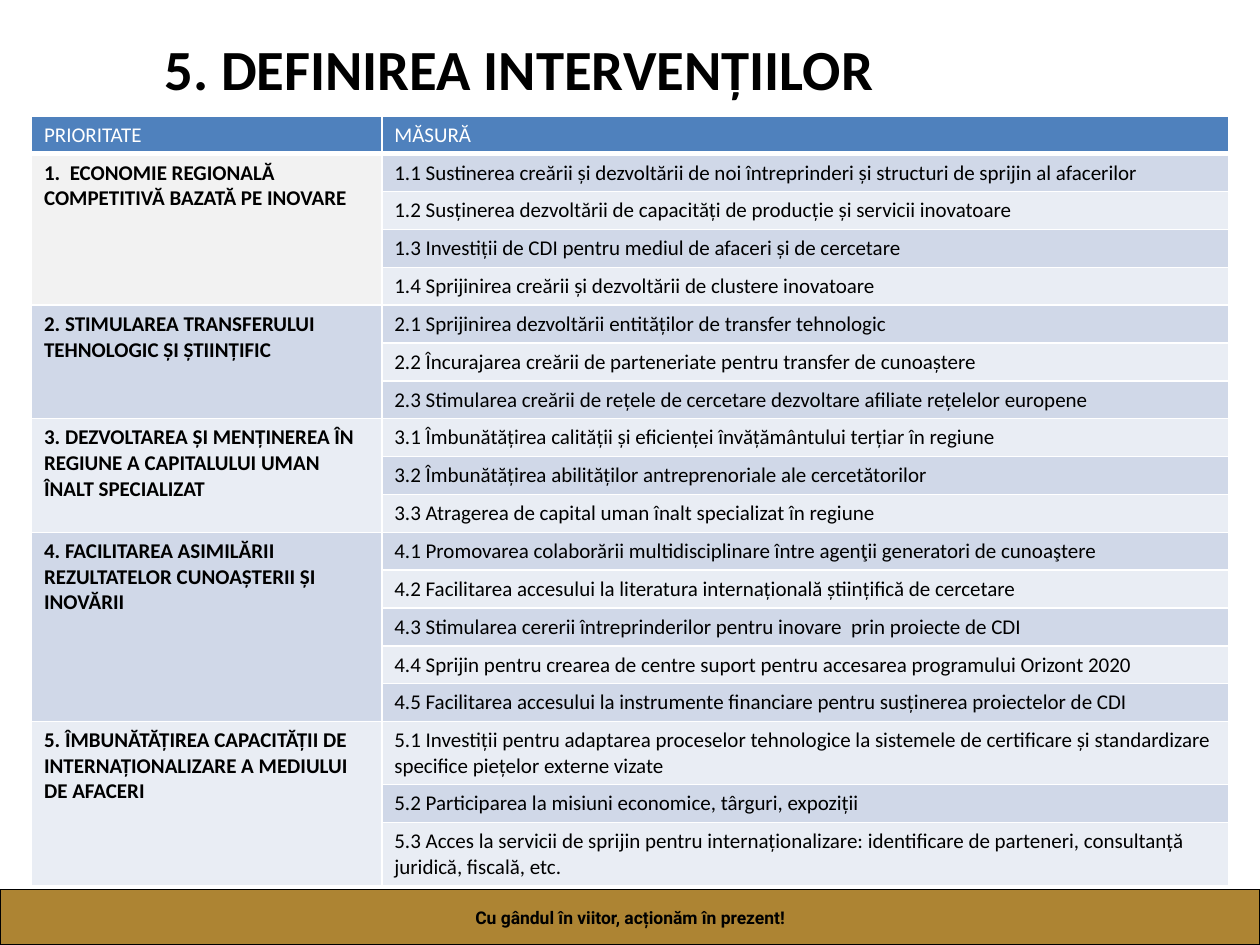
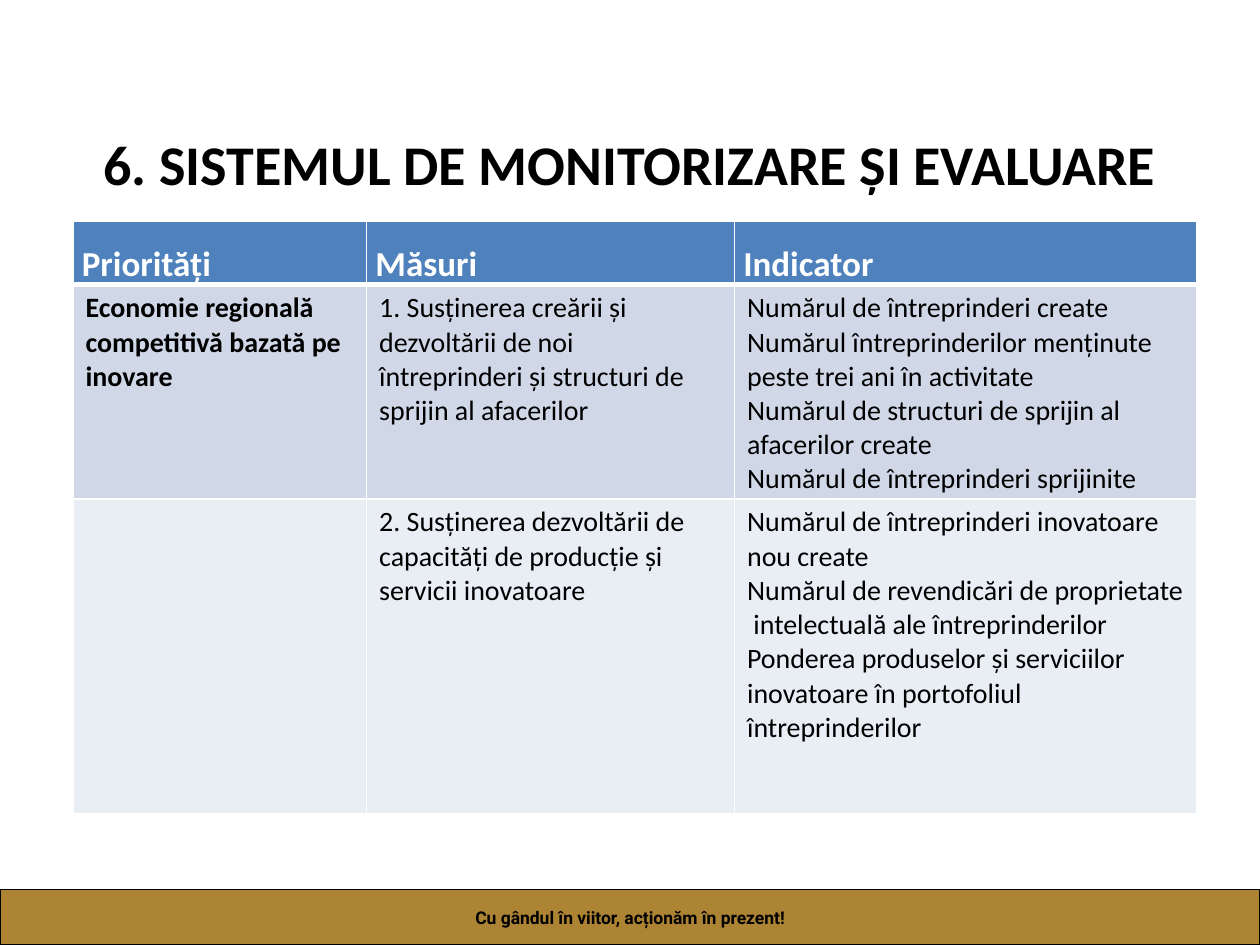
from lxml import etree
from pptx import Presentation
from pptx.dml.color import RGBColor
from pptx.enum import shapes, text
from pptx.oxml.ns import qn
from pptx.util import Inches, Pt

# Content
SLOGAN = "Cu gândul în viitor, acționăm în prezent!"

INTERVENTIONS_TITLE = "5. DEFINIREA INTERVENȚIILOR"
INTERVENTIONS_HEADER = ("PRIORITATE", "MĂSURĂ")
PRIORITIES = [
    ("1.  ECONOMIE REGIONALĂ COMPETITIVĂ BAZATĂ PE INOVARE", [
        "1.1 Sustinerea creării și dezvoltării de noi întreprinderi și structuri de sprijin al afacerilor",
        "1.2 Susținerea dezvoltării de capacități de producție și servicii inovatoare",
        "1.3 Investiții de CDI pentru mediul de afaceri și de cercetare",
        "1.4 Sprijinirea creării și dezvoltării de clustere inovatoare",
    ]),
    ("2. STIMULAREA TRANSFERULUI TEHNOLOGIC ȘI ȘTIINȚIFIC", [
        "2.1 Sprijinirea dezvoltării entităților de transfer tehnologic",
        "2.2 Încurajarea creării de parteneriate pentru transfer de cunoaștere",
        "2.3 Stimularea creării de rețele de cercetare dezvoltare afiliate rețelelor europene",
    ]),
    ("3. DEZVOLTAREA ȘI MENȚINEREA ÎN REGIUNE A CAPITALULUI UMAN ÎNALT SPECIALIZAT", [
        "3.1 Îmbunătățirea calității și eficienței învățământului terțiar în regiune",
        "3.2 Îmbunătățirea abilităților antreprenoriale ale cercetătorilor",
        "3.3 Atragerea de capital uman înalt specializat în regiune",
    ]),
    ("4. FACILITAREA ASIMILĂRII REZULTATELOR CUNOAȘTERII ȘI INOVĂRII", [
        "4.1 Promovarea colaborării multidisciplinare între agenţii generatori de cunoaştere",
        "4.2 Facilitarea accesului la literatura internațională științifică de cercetare",
        "4.3 Stimularea cererii întreprinderilor pentru inovare  prin proiecte de CDI",
        "4.4 Sprijin pentru crearea de centre suport pentru accesarea programului Orizont 2020",
        "4.5 Facilitarea accesului la instrumente financiare pentru susținerea proiectelor de CDI",
    ]),
    ("5. ÎMBUNĂTĂȚIREA CAPACITĂȚII DE INTERNAȚIONALIZARE A MEDIULUI DE AFACERI", [
        "5.1 Investiții pentru adaptarea proceselor tehnologice la sistemele de certificare și "
        "standardizare specifice piețelor externe vizate",
        "5.2 Participarea la misiuni economice, târguri, expoziții",
        "5.3 Acces la servicii de sprijin pentru internaționalizare: identificare de parteneri, "
        "consultanță juridică, fiscală, etc.",
    ]),
]

MONITORING_TITLE = "6. SISTEMUL DE MONITORIZARE ȘI EVALUARE"
MONITORING_HEADER = ("Priorități", "Măsuri", "Indicator")
MONITORING = [
    (["Economie regională competitivă bazată pe inovare"],
     ["1. Susținerea creării și dezvoltării de noi întreprinderi și structuri de sprijin al afacerilor"],
     ["Numărul de întreprinderi create",
      "Numărul întreprinderilor menținute peste trei ani în activitate",
      "Numărul de structuri de sprijin al afacerilor create",
      "Numărul de întreprinderi sprijinite"]),
    ([""],
     ["2. Susținerea dezvoltării de capacități de producție și servicii inovatoare"],
     ["Numărul de întreprinderi inovatoare nou create",
      "Numărul de revendicări de proprietate  intelectuală ale întreprinderilor",
      "Ponderea produselor și serviciilor inovatoare în portofoliul întreprinderilor"]),
]

# Shared look
FONT = "Calibri"
BLACK, WHITE, GOLD = "000000", "FFFFFF", "996600"
HEADER_BLUE, FIRST_PRIORITY = "4F81BD", "F2F2F2"
BANDS = ("D0D8E8", "E9EDF4")


def color(hex_string):
    return RGBColor.from_string(hex_string)


def style(paragraph, size, hex_string=BLACK, bold=False, font=FONT):
    paragraph.font.name = font
    paragraph.font.size = Pt(size)
    paragraph.font.bold = bold
    paragraph.font.color.rgb = color(hex_string)


def add_base(deck, title, box, size):
    """Blank slide with the slogan band and a centred title."""
    slide = deck.slides.add_slide(deck.slide_layouts[6])

    band = slide.shapes.add_shape(shapes.MSO_SHAPE.RECTANGLE, 0, Inches(7.06), Inches(10), Inches(0.44))
    band.shadow.inherit = False
    band.fill.solid()
    band.fill.fore_color.rgb = color(GOLD)
    tint = band.fill._xPr.find(qn("a:solidFill"))[0]
    etree.SubElement(tint, qn("a:alpha"), val="80000")
    band.line.color.rgb = color(BLACK)
    band.line.width = Pt(0.75)

    heading = slide.shapes.add_textbox(*map(Inches, box))
    for shape, words, points, font in ((band, SLOGAN, 10, "Roboto"), (heading, title, size, FONT)):
        frame = shape.text_frame
        frame.word_wrap = shape is heading
        frame.vertical_anchor = text.MSO_ANCHOR.MIDDLE
        frame.text = words
        frame.paragraphs[0].alignment = text.PP_ALIGN.CENTER
        style(frame.paragraphs[0], points, bold=True, font=font)
    return slide


def add_grid(slide, left, top, widths, heights):
    grid = slide.shapes.add_table(len(heights), len(widths), Inches(left), Inches(top),
                                  Inches(sum(widths)), Inches(sum(heights))).table
    for column, width in zip(grid.columns, widths):
        column.width = Inches(width)
    for row, height in zip(grid.rows, heights):
        row.height = Inches(height)
    return grid


def fill_cell(cell, lines, size, fill, hex_string=BLACK, bold=False, bottom=1):
    cell.text = "\n".join(lines)
    for paragraph in cell.text_frame.paragraphs:
        style(paragraph, size, hex_string, bold)
    # White borders go ahead of the fill in the cell properties
    properties = cell._tc.get_or_add_tcPr()
    for side, points in (("L", 1), ("R", 1), ("T", 1), ("B", bottom)):
        border = etree.SubElement(properties, qn(f"a:ln{side}"), w=str(Pt(points)))
        solid = etree.SubElement(border, qn("a:solidFill"))
        etree.SubElement(solid, qn("a:srgbClr"), val=WHITE)
    cell.fill.solid()
    cell.fill.fore_color.rgb = color(fill)


def fill_header(grid, labels, size, bold):
    for column, label in enumerate(labels):
        fill_cell(grid.cell(0, column), [label], size, HEADER_BLUE, WHITE, bold, bottom=3)


def build_interventions(deck):
    slide = add_base(deck, INTERVENTIONS_TITLE, (0.33, 0.25, 7.58, 0.58), 32.4)
    measures = [measure for _, group in PRIORITIES for measure in group]
    heights = [0.29] + [0.49 if len(measure) > 100 else 0.29 for measure in measures]
    grid = add_grid(slide, 0.25, 0.92, (2.78, 6.72), heights)
    fill_header(grid, INTERVENTIONS_HEADER, 12, False)

    for row, measure in enumerate(measures, 1):
        fill_cell(grid.cell(row, 1), [measure], 12, BANDS[(row - 1) % 2])

    # Each priority spans its measures and takes the band of the first
    row = 1
    for priority, group in PRIORITIES:
        fill = FIRST_PRIORITY if row == 1 else BANDS[(row - 1) % 2]
        for offset in range(len(group)):
            fill_cell(grid.cell(row + offset, 0), [priority] if offset == 0 else [""], 12, fill, bold=True)
        grid.cell(row, 0).merge(grid.cell(row + len(group) - 1, 0))
        row += len(group)


def build_monitoring(deck):
    slide = add_base(deck, MONITORING_TITLE, (0.5, 0.67, 9, 1.25), 32)
    grid = add_grid(slide, 0.58, 1.76, (2.33, 2.92, 3.67), (0.46, 1.63, 2.5))
    fill_header(grid, MONITORING_HEADER, 20, True)
    for cell in grid.rows[0].cells:
        cell.margin_left = cell.margin_right = Inches(0.07)
        cell.margin_top = cell.margin_bottom = 0
        label = cell.text_frame.paragraphs[0]
        label.alignment = text.PP_ALIGN.JUSTIFY
        label.line_spacing = 1.5

    for row, entry in enumerate(MONITORING, 1):
        for column, lines in enumerate(entry):
            fill_cell(grid.cell(row, column), lines, 16, BANDS[row - 1], bold=column == 0)


def main():
    deck = Presentation()
    deck.slide_width, deck.slide_height = Inches(10), Inches(7.5)
    build_interventions(deck)
    build_monitoring(deck)
    deck.save("out.pptx")


if __name__ == "__main__":
    main()
